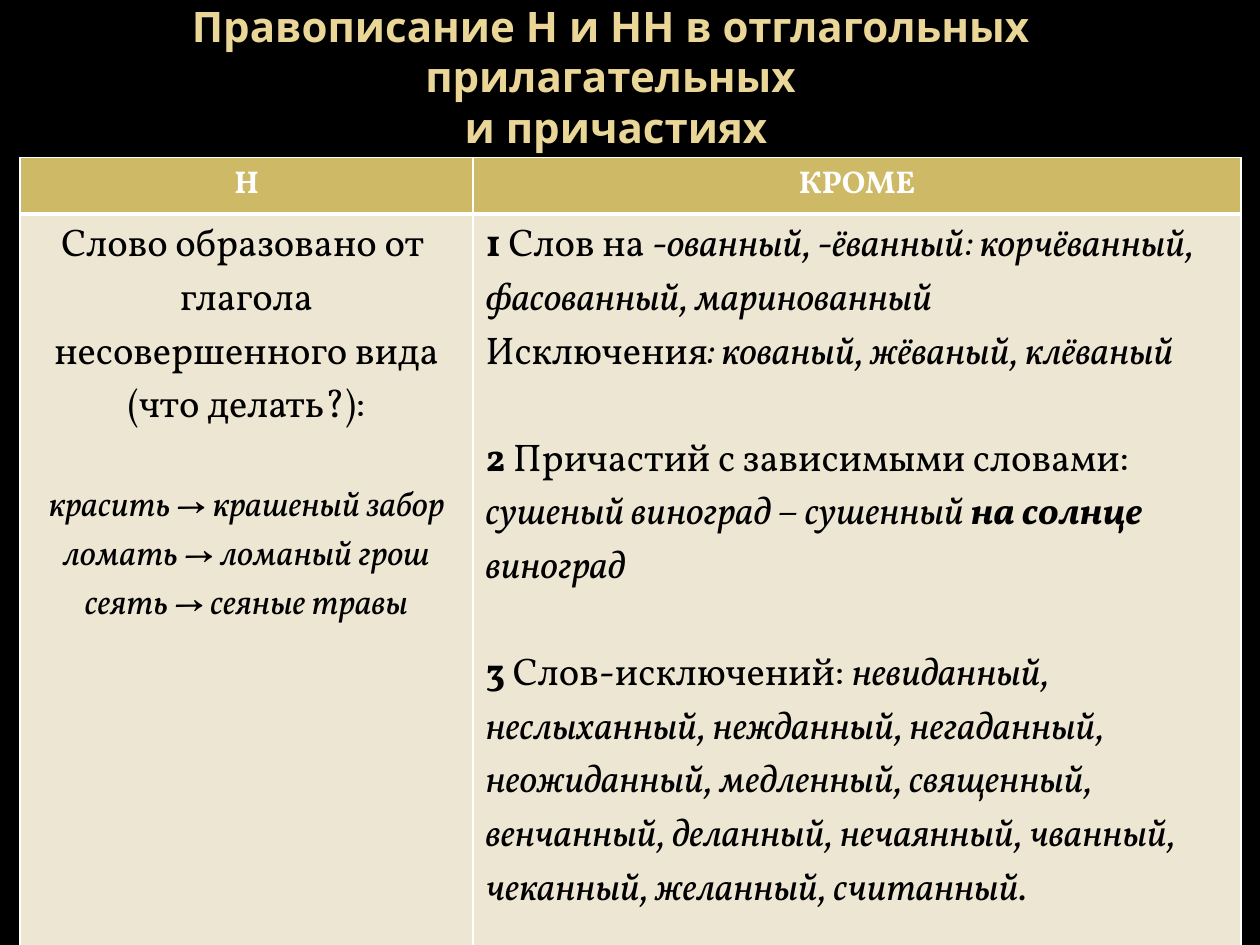
from lxml.etree import SubElement
from pptx import Presentation
from pptx.dml.color import RGBColor
from pptx.enum.text import MSO_ANCHOR, MSO_AUTO_SIZE, PP_ALIGN
from pptx.oxml.ns import qn
from pptx.util import Pt

BLACK = RGBColor(0x00, 0x00, 0x00)
WHITE = RGBColor(0xFF, 0xFF, 0xFF)
GOLD = RGBColor(0xCE, 0xB9, 0x66)
CREAM = RGBColor(0xED, 0xE6, 0xD3)
SAND = RGBColor(0xEA, 0xD6, 0x96)

HEAD = "Noto Sans"
BODY = "Vollkorn"
LEFT, MID = PP_ALIGN.LEFT, PP_ALIGN.CENTER

# A paragraph is (size, space before, runs); a run is (text, style),
# where the style holds "b" for bold and "i" for italic.
RULE = [
    (22, 0, [("Слово образовано от ", "")]),
    (22, 0, [("глагола несовершенного вида (что делать?):", "")]),
    (20, 27.9, [("красить → крашеный забор", "i")]),
    (20, 0, [("ломать → ломаный грош", "i")]),
    (20, 0, [("сеять → сеяные травы", "i")]),
]
EXCEPT = [
    (22, 0, [
        ("1", "b"),
        (" Слов на ", ""),
        ("-ованный, -ёванный: корчёванный, фасованный, маринованный", "i"),
    ]),
    (22, 0, [("Исключения", ""), (": кованый, жёваный, клёваный", "i")]),
    (22, 30.7, [
        ("2", "b"),
        (" Причастий с зависимыми словами: ", ""),
        ("сушеный виноград – сушенный ", "i"),
        ("на солнце ", "bi"),
        ("виноград", "i"),
    ]),
    (22, 30.7, [
        ("3", "b"),
        (" Слов-исключений: ", ""),
        ("невиданный, неслыханный, нежданный, негаданный, неожиданный, "
         "медленный, священный, венчанный, деланный, нечаянный, чванный, "
         "чеканный, желанный, считанный.", "i"),
    ]),
]


class Deck:
    def __init__(self):
        self.prs = Presentation()
        self.prs.slide_width, self.prs.slide_height = Pt(720), Pt(540)
        self.slide = self.prs.slides.add_slide(self.prs.slide_layouts[5])
        fill = self.slide.background.fill
        fill.solid()
        fill.fore_color.rgb = BLACK

    def text(self, frame, paras, face, color, align):
        for num, (size, gap, runs) in enumerate(paras):
            para = frame.paragraphs[0] if num == 0 else frame.add_paragraph()
            para.alignment = align
            para.space_before = Pt(gap)
            for words, style in runs:
                if words == "\n":
                    para.add_line_break()
                    continue
                run = para.add_run()
                run.text = words
                font = run.font
                font.name, font.size = face, Pt(size)
                font.bold, font.italic = "b" in style, "i" in style
                font.color.rgb = color

    def title(self, box, runs):
        shape = self.slide.shapes.title
        shape.left, shape.top, shape.width, shape.height = map(Pt, box)
        frame = shape.text_frame
        frame.auto_size = MSO_AUTO_SIZE.NONE
        frame.word_wrap = True
        frame.vertical_anchor = MSO_ANCHOR.MIDDLE
        frame.margin_bottom = Pt(36.3)  # lifts the text by half a line
        self.text(frame, [(24, 0, runs)], HEAD, SAND, MID)

    def edge(self, cell, **widths):
        """Draw white cell borders; keys are L, R, T and B, in that order."""
        props = cell._tc.get_or_add_tcPr()
        for num, (side, width) in enumerate(widths.items()):
            line = props.makeelement(qn("a:ln" + side), {"w": str(Pt(width))})
            fill = SubElement(line, qn("a:solidFill"))
            SubElement(fill, qn("a:srgbClr"), val=str(WHITE))
            props.insert(num, line)

    def table(self, box, cols, rows, cells):
        grid = self.slide.shapes.add_table(
            len(rows), len(cols), *map(Pt, box)).table
        grid.horz_banding = False
        for col, width in zip(grid.columns, cols):
            col.width = Pt(width)
        for row, high in zip(grid.rows, rows):
            row.height = Pt(high)
        for r, line in enumerate(cells):
            for c, (paras, align) in enumerate(line):
                cell = grid.cell(r, c)
                cell.fill.solid()
                cell.fill.fore_color.rgb = CREAM if r else GOLD
                self.edge(cell, L=1, R=1, T=3 if r else 1, B=1 if r else 3)
                self.text(cell.text_frame, paras, BODY,
                          BLACK if r else WHITE, align)
        return grid


def main():
    deck = Deck()
    deck.title((0, 18, 697.7, 83.5), [
        ("Правописание Н и НН в отглагольных прилагательных", "b"),
        ("\n", ""),
        (" и причастиях", "b"),
    ])
    heads = [([(18, 0, [(word, "b")])], MID) for word in ("Н", "КРОМЕ")]
    grid = deck.table((11.5, 90, 697.7, 429), (258.8, 438.9), (31, 398),
                      [heads, [(RULE, MID), (EXCEPT, LEFT)]])
    grid.cell(1, 1).margin_bottom = Pt(24)
    deck.prs.save("out.pptx")


if __name__ == "__main__":
    main()
